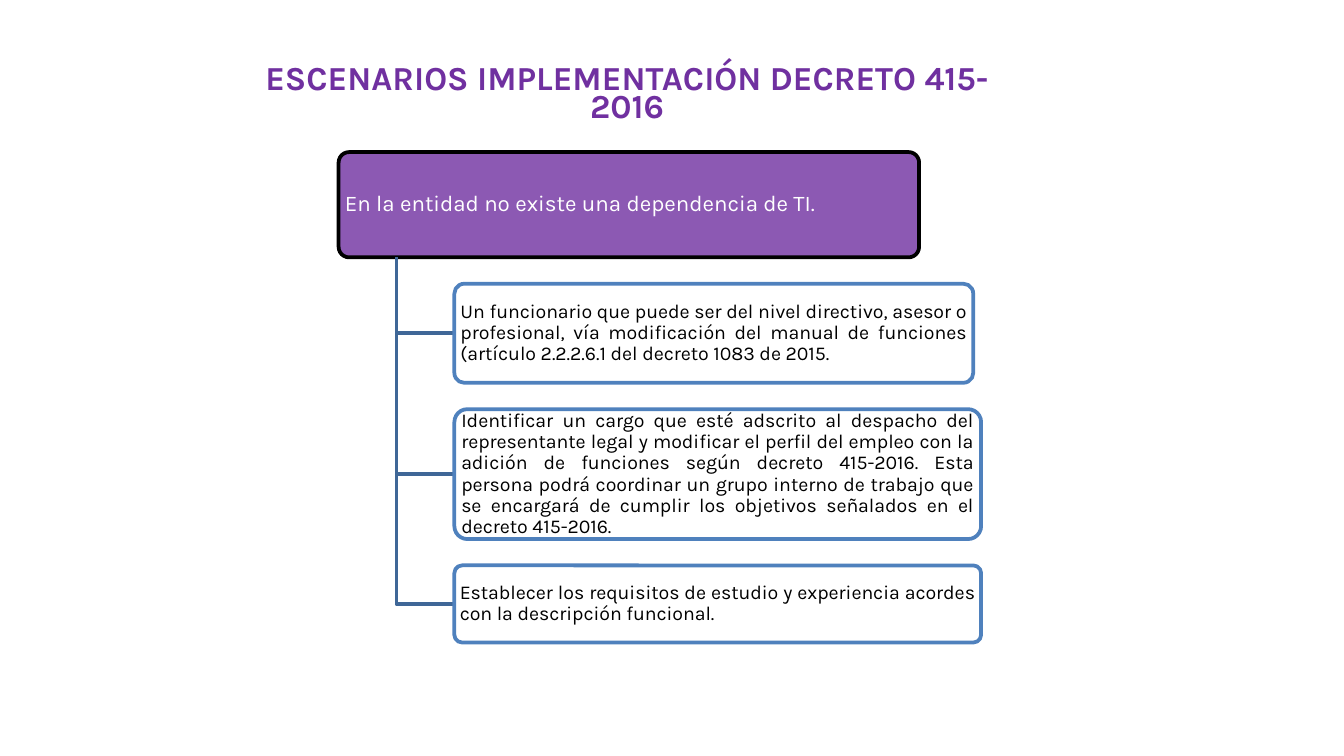
from lxml.etree import SubElement
from pptx import Presentation
from pptx.dml.color import RGBColor
from pptx.enum.shapes import MSO_SHAPE as Shape
from pptx.enum.text import MSO_ANCHOR as Anchor, MSO_AUTO_SIZE as AutoSize, PP_ALIGN as Align
from pptx.oxml.ns import qn
from pptx.util import Pt

COLORS = {
    "purple": "7030A0",
    "blue": "4F81BD",
    "connector": "3F6797",
    "white": "FFFFFF",
    "black": "000000",
}
GAP = 14.1
TRUNK_X = 212.4
CHILD_LEFT = 243.4
ROOT = {"left": 181.4, "top": 81.5, "width": 311, "height": 56.4}
CHILDREN = [
    (278, 53.1, "Un funcionario que puede ser del nivel directivo, asesor o profesional, vía modificación del manual de funciones (artículo 2.2.2.6.1 del decreto 1083 de 2015."),
    (282.2, 69.6, "Identificar un cargo que esté adscrito al despacho del representante legal y modificar el perfil del empleo con la adición de funciones según decreto 415-2016. Esta persona podrá coordinar un grupo interno de trabajo que se encargará de cumplir los objetivos señalados en el decreto 415-2016."),
    (282.2, 41.3, "Establecer los requisitos de estudio y experiencia acordes con la descripción funcional."),
]


def write_text(shape, text, size, color, frame_format, align, spacing, bold=False):
    frame = shape.text_frame
    for name, value in frame_format.items():
        setattr(frame, name, value)
    paragraph = frame.paragraphs[0]
    paragraph.text = text
    paragraph.alignment = align
    paragraph.line_spacing = spacing
    font = paragraph.runs[0].font
    for name, value in {"name": "Karla", "size": Pt(size), "bold": bold}.items():
        setattr(font, name, value)
    font.color.rgb = RGBColor.from_string(COLORS[color])


def add_box(box, text, size, text_color, fill, opacity, line):
    shape = slide.shapes.add_shape(Shape.ROUNDED_RECTANGLE, *(Pt(value) for value in box))
    shape.adjustments[0] = 0.1
    shape.shadow.inherit = False
    shape.fill.solid()
    shape.fill.fore_color.rgb = RGBColor.from_string(COLORS[fill])
    fill_color = shape.fill._xPr.find(qn("a:solidFill"))[0]
    SubElement(fill_color, qn("a:alpha"), val=str(opacity * 1000))
    shape.line.color.rgb = RGBColor.from_string(COLORS[line])
    shape.line.width = Pt(2)
    margins = dict.fromkeys(("margin_left", "margin_right", "margin_top", "margin_bottom"), Pt(1.7))
    frame_format = {"word_wrap": True, "vertical_anchor": Anchor.MIDDLE, **margins}
    write_text(shape, text, size, text_color, frame_format, Align.JUSTIFY, 0.9)


presentation = Presentation()
presentation.slide_width = Pt(720)
presentation.slide_height = Pt(405)
slide = presentation.slides.add_slide(presentation.slide_layouts[6])

title = slide.shapes.add_textbox(Pt(116), Pt(33), Pt(440), Pt(22.3))
title_format = {"word_wrap": True, "auto_size": AutoSize.SHAPE_TO_FIT_TEXT}
write_text(title, "ESCENARIOS IMPLEMENTACIÓN DECRETO 415-2016", 18, "purple",
           title_format, Align.CENTER, 0.7, bold=True)

add_box(ROOT.values(), "En la entidad no existe una dependencia de TI.", 12, "white", "purple", 80, "black")

root_bottom = ROOT["top"] + ROOT["height"]
top = root_bottom + GAP
for width, height, text in CHILDREN:
    middle = top + height / 2
    builder = slide.shapes.build_freeform(Pt(TRUNK_X), Pt(root_bottom))
    builder.add_line_segments([(Pt(TRUNK_X), Pt(middle)), (Pt(CHILD_LEFT), Pt(middle))], close=False)
    branch = builder.convert_to_shape()
    branch.shadow.inherit = False
    branch.fill.background()
    branch.line.color.rgb = RGBColor.from_string(COLORS["connector"])
    branch.line.width = Pt(2)
    add_box((CHILD_LEFT, top, width, height), text, 10.5, "black", "white", 90, "blue")
    top += height + GAP

presentation.save("out.pptx")
